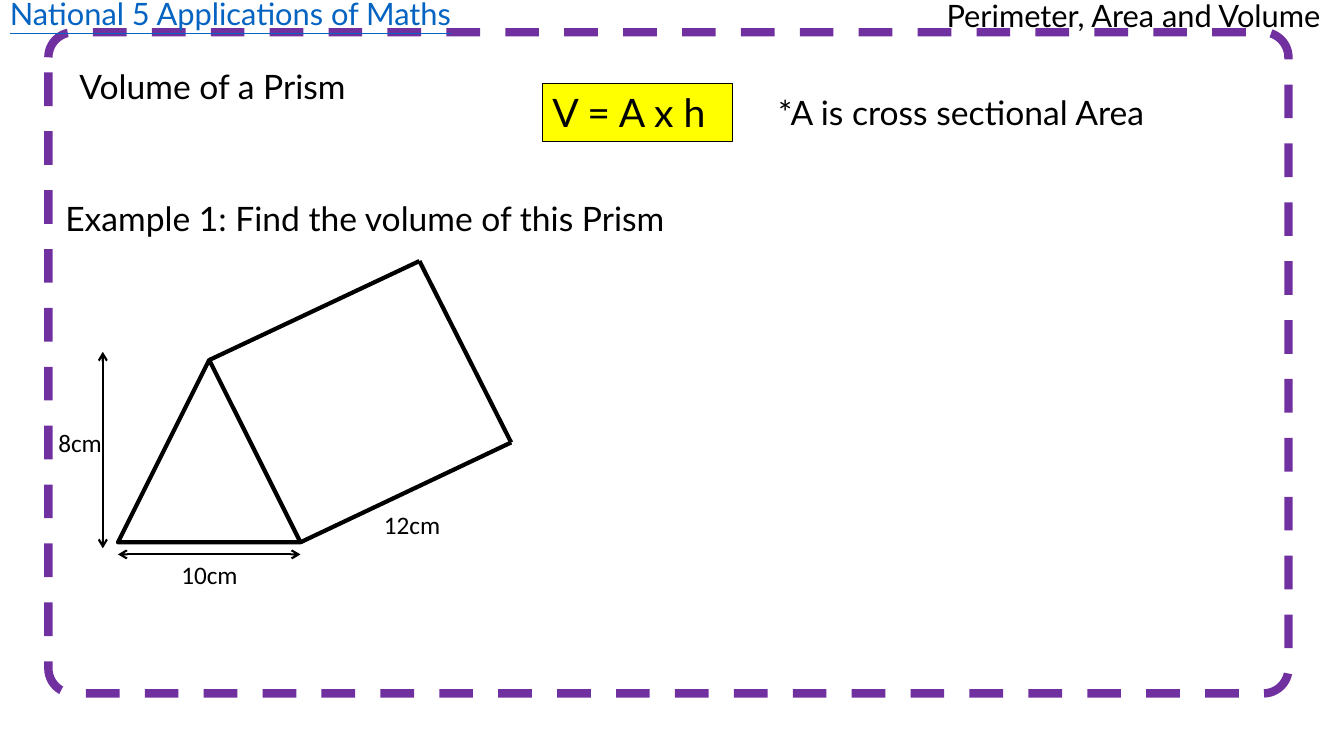
from lxml import etree
from pptx import Presentation
from pptx.dml.color import RGBColor
from pptx.enum.dml import MSO_LINE
from pptx.enum.shapes import MSO_CONNECTOR, MSO_SHAPE
from pptx.enum.text import MSO_AUTO_SIZE, PP_ALIGN
from pptx.oxml.ns import qn
from pptx.util import Inches, Pt

STRAIGHT = MSO_CONNECTOR.STRAIGHT
ROUNDED = MSO_SHAPE.ROUNDED_RECTANGLE
TRIANGLE = MSO_SHAPE.FLOWCHART_EXTRACT
DASH = MSO_LINE.DASH
LEFT = PP_ALIGN.LEFT
GROW = MSO_AUTO_SIZE.SHAPE_TO_FIT_TEXT

COLOURS = {
    "frame": "7030A0",
    "ink": "000000",
    "link": "0563C1",
    "formula": "FFFF00",
}

deck = Presentation()
deck.slide_width, deck.slide_height = Inches(13.33), Inches(7.5)
page = deck.slides.add_slide(deck.slide_layouts[6])


def colour(name):
    return RGBColor.from_string(COLOURS[name])


def set_line(line, name, width):
    line.color.rgb = colour(name)
    line.width = Pt(width)


# Dashed frame
frame = page.shapes.add_shape(
    ROUNDED, Inches(0.48), Inches(0.32), Inches(12.3), Inches(6.56))
frame.adjustments[0] = 0.038
frame.shadow.inherit = False
frame.fill.background()
set_line(frame.line, "frame", 6)
frame.line.dash_style = DASH

# Text: wording, left, top, width, height, size, font, wrap
texts = [
    ("Perimeter, Area and Volume", 9.29, -0.08, 4.04, 0.47, 22, "Lato", False),
    ("National 5 Applications of Maths", 0, -0.1, 4.63, 0.47, 22, "Lato", False),
    ("Volume of a Prism", 0.69, 0.6, 5.83, 0.5, 24, "Lato", True),
    ("V = A x h", 5.38, 0.83, 1.89, 0.57, 28, "Lato", True),
    ("Example 1: Find the volume of this Prism", 0.55, 1.91, 8.64, 0.5, 24, "Lato", True),
    ("*A is cross sectional Area", 7.62, 0.86, 4.06, 0.5, 24, "Lato", True),
    ("10cm", 1.7, 5.5, 0.77, 0.4, 18, "Calibri", False),
    ("8cm", 0.48, 4.19, 0.64, 0.4, 18, "Calibri", False),
    ("12cm", 3.71, 5, 0.77, 0.4, 18, "Calibri", False),
]
boxes = {}
for wording, left, top, width, height, size, font, wrap in texts:
    box = page.shapes.add_textbox(
        Inches(left), Inches(top), Inches(width), Inches(height))
    box.text_frame.text = wording
    box.text_frame.word_wrap = wrap
    box.text_frame.auto_size = GROW
    para = box.text_frame.paragraphs[0]
    para.alignment = LEFT
    span = para.runs[0]
    span.font.size = Pt(size)
    span.font.name = font
    span.font.color.rgb = colour("ink")
    boxes[wording] = box

course = boxes["National 5 Applications of Maths"].text_frame.paragraphs[0].runs[0]
course.font.underline = True
course.font.color.rgb = colour("link")

formula = boxes["V = A x h"]
formula.fill.solid()
formula.fill.fore_color.rgb = colour("formula")
set_line(formula.line, "ink", 0.75)

# Prism: front triangle, then the edges running back from it
front = page.shapes.add_shape(
    TRIANGLE, Inches(1.17), Inches(3.57), Inches(1.81), Inches(1.81))
front.shadow.inherit = False
front.fill.background()
set_line(front.line, "ink", 3)

apex, corner = (2.08, 3.57), (2.98, 5.38)
back_apex, back_corner = (4.16, 2.59), (5.07, 4.39)

# Lines: start, end, width, arrowheads at both ends
lines = [
    (apex, back_apex, 3, False),
    (corner, back_corner, 3, False),
    (back_apex, back_corner, 3, False),
    ((1.17, 5.5), (2.98, 5.5), 1.5, True),
    ((1.02, 5.44), (1.02, 3.49), 1.5, True),
]
for start, end, width, arrows in lines:
    edge = page.shapes.add_connector(
        STRAIGHT, *[Inches(value) for value in start + end])
    set_line(edge.line, "ink", width)
    properties = edge._element.spPr
    if arrows:
        outline = properties.find(qn("a:ln"))
        for tip in ("a:headEnd", "a:tailEnd"):
            etree.SubElement(outline, qn(tip), type="arrow")
    etree.SubElement(properties, qn("a:effectLst"))

deck.save("out.pptx")
